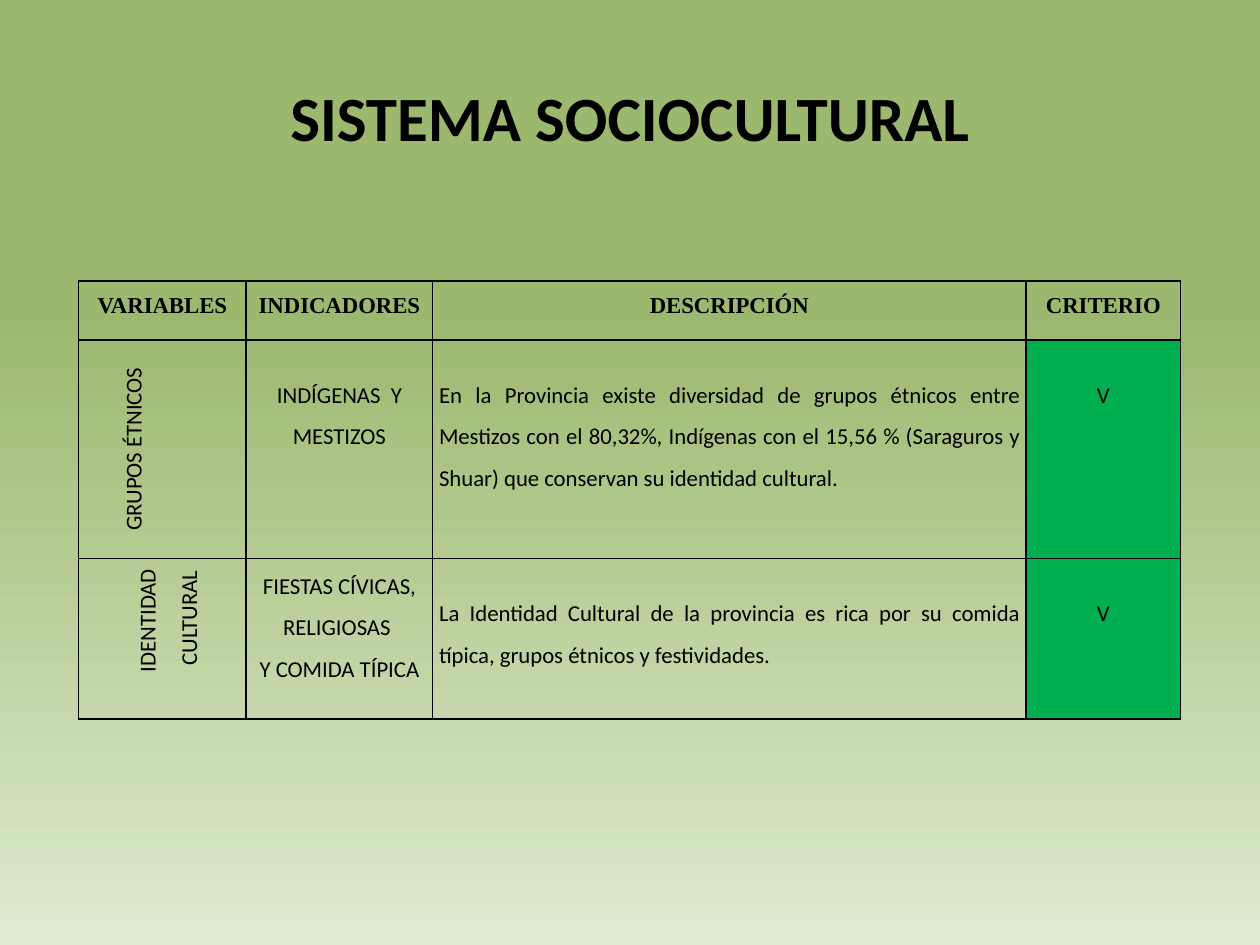
"""Build the sociocultural system slide with its table of variables and criteria."""
from dataclasses import dataclass
from typing import Optional

from lxml import etree
from pptx import Presentation
from pptx import util as u
from pptx.dml.color import RGBColor
from pptx.enum import text
from pptx.oxml import ns
from pptx.table import _Cell as TableCell

BLACK = RGBColor(0x00, 0x00, 0x00)
GREEN = RGBColor(0x00, 0xB0, 0x50)
OLIVE = RGBColor(0x9C, 0xB8, 0x6E)
PALE_GREEN = RGBColor(0xDD, 0xEB, 0xCF)

CENTER = text.PP_ALIGN.CENTER
JUSTIFY = text.PP_ALIGN.JUSTIFY
LOWERED = 0.56
COLUMN_WIDTHS = (3.38, 3.76, 11.96, 3.12)
ROW_HEIGHTS = (1.19, 3.91, 3.23)


@dataclass(frozen=True)
class Entry:
    words: str
    align: text.PP_ALIGN = CENTER
    font: str = "Calibri"
    bold: bool = False
    side: float = 0.13
    top: float = 0
    bottom: float = 0
    right: Optional[float] = None
    fill: Optional[RGBColor] = None
    upward: bool = False


def heading(words: str) -> Entry:
    return Entry(words, font="Times New Roman", bold=True, side=0.18)


def description(words: str) -> Entry:
    return Entry(words, align=JUSTIFY, top=LOWERED)


CRITERION = Entry("V", top=LOWERED, fill=GREEN)
ROWS = (
    tuple(map(heading, ("VARIABLES", "INDICADORES", "DESCRIPCIÓN", "CRITERIO"))),
    (
        Entry("GRUPOS ÉTNICOS", side=LOWERED, top=LOWERED, bottom=LOWERED, upward=True),
        Entry("INDÍGENAS  Y MESTIZOS", top=LOWERED),
        description(
            "En la Provincia existe diversidad de grupos étnicos entre Mestizos con el "
            "80,32%, Indígenas con el 15,56 % (Saraguros y Shuar) que conservan su "
            "identidad cultural."
        ),
        CRITERION,
    ),
    (
        Entry("IDENTIDAD \nCULTURAL", side=0.84, top=0.84, right=0, upward=True),
        Entry("FIESTAS CÍVICAS, RELIGIOSAS \nY COMIDA TÍPICA"),
        description(
            "La Identidad Cultural de la provincia es rica por su comida típica, "
            "grupos étnicos y festividades."
        ),
        CRITERION,
    ),
)


def style_paragraph(paragraph, words: str, align, font: str, size: float, bold: bool) -> None:
    paragraph.text = words
    paragraph.alignment = align
    paragraph.font.name = font
    paragraph.font.size = u.Pt(size)
    paragraph.font.bold = bold
    paragraph.font.color.rgb = BLACK


def add_borders(cell: TableCell) -> None:
    properties = cell._tc.get_or_add_tcPr()
    for position, side in enumerate(("lnL", "lnR", "lnT", "lnB")):
        line = etree.Element(ns.qn(f"a:{side}"), w=str(u.Pt(1)))
        fill = etree.SubElement(line, ns.qn("a:solidFill"))
        etree.SubElement(fill, ns.qn("a:srgbClr"), val=str(BLACK))
        properties.insert(position, line)


def fill_cell(cell: TableCell, entry: Entry) -> None:
    cell.margin_left = u.Cm(entry.side)
    cell.margin_right = u.Cm(entry.side if entry.right is None else entry.right)
    cell.margin_top = u.Cm(entry.top)
    cell.margin_bottom = u.Cm(entry.bottom)
    if entry.fill is None:
        cell.fill.background()
    else:
        cell.fill.solid()
        cell.fill.fore_color.rgb = entry.fill
    add_borders(cell)
    if entry.upward:
        cell._tc.get_or_add_tcPr().set("vert", "vert270")
    paragraph = cell.text_frame.paragraphs[0]
    style_paragraph(paragraph, entry.words, entry.align, entry.font, 13, entry.bold)
    paragraph.line_spacing = 1.5


def paint_background(slide) -> None:
    fill = slide.background.fill
    fill.gradient()
    fill.gradient_angle = 270
    for stop, position, color in zip(fill.gradient_stops, (0.33, 1), (OLIVE, PALE_GREEN)):
        stop.position = position
        stop.color.rgb = color


def add_title(slide, words: str) -> None:
    shape = slide.shapes.add_textbox(u.Cm(1.27), u.Cm(0.76), u.Cm(22.86), u.Cm(3.18))
    frame = shape.text_frame
    frame.word_wrap = True
    frame.vertical_anchor = text.MSO_ANCHOR.MIDDLE
    style_paragraph(frame.paragraphs[0], words, CENTER, "Calibri", 36, True)


def add_variables_table(slide) -> None:
    table = slide.shapes.add_table(
        len(ROWS), len(COLUMN_WIDTHS), u.Cm(1.58), u.Cm(5.66),
        u.Cm(sum(COLUMN_WIDTHS)), u.Cm(sum(ROW_HEIGHTS)),
    ).table
    table.horz_banding = False
    for column, width in zip(table.columns, COLUMN_WIDTHS):
        column.width = u.Cm(width)
    for row, height, entries in zip(table.rows, ROW_HEIGHTS, ROWS):
        row.height = u.Cm(height)
        for cell, entry in zip(row.cells, entries):
            fill_cell(cell, entry)


def main() -> None:
    presentation = Presentation()
    presentation.slide_width = u.Cm(25.4)
    presentation.slide_height = u.Cm(19.05)
    slide = presentation.slides.add_slide(presentation.slide_layouts[6])
    paint_background(slide)
    add_title(slide, "SISTEMA SOCIOCULTURAL")
    add_variables_table(slide)
    presentation.save("out.pptx")


if __name__ == "__main__":
    main()
